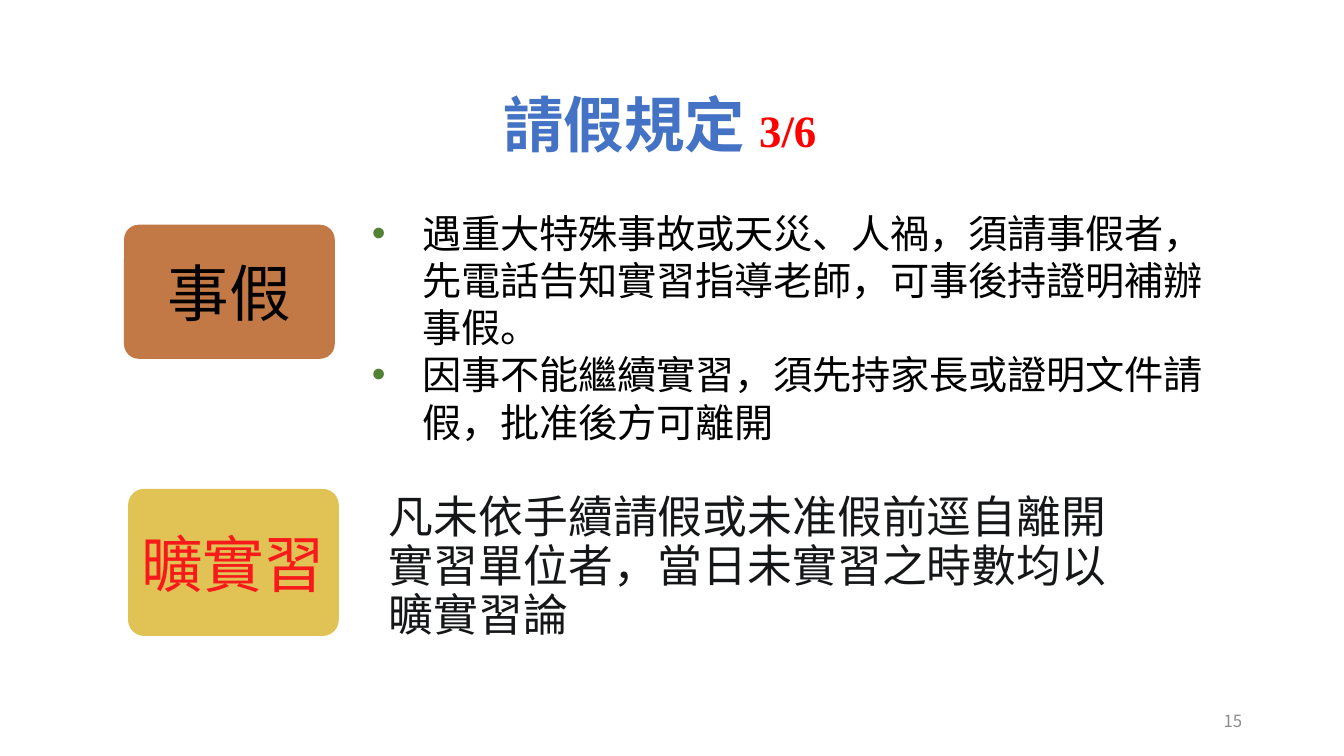
"""Build the slide on leave rules: personal leave and unexcused absence."""
import pptx
import pptx.dml.color
import pptx.enum.shapes
import pptx.enum.text
import pptx.oxml
import pptx.oxml.ns
import pptx.util

Inches, Pt = pptx.util.Inches, pptx.util.Pt
ALIGN, ANCHOR = pptx.enum.text.PP_ALIGN, pptx.enum.text.MSO_ANCHOR
CJK = "Noto Sans CJK SC"
COLORS = {
    "title": "4472C4", "count": "FF0000", "black": "000000", "bullet": "548235",
    "brown": "C27946", "yellow": "E0C354", "red": "F81A1A", "ink": "151617",
    "number": "8C8C8C",
}


def style_font(font, size, color, name=CJK, **attributes):
    """Set size, colour, Latin and East Asian face, and extra run attributes."""
    font.size = Pt(size)
    font.color.rgb = pptx.dml.color.RGBColor.from_string(COLORS[color])
    font.name = name
    properties = font._element if hasattr(font, "_element") else font._rPr
    east_asian = pptx.oxml.parse_xml(
        f'<a:ea {pptx.oxml.ns.nsdecls("a")} typeface="{name}"/>')
    properties.find(pptx.oxml.ns.qn("a:latin")).addnext(east_asian)
    for key, value in attributes.items():
        properties.set(key, value)


def add_text(page, left, top, width, height):
    """Add a wrapping text box and return its frame."""
    box = page.shapes.add_textbox(*map(Inches, (left, top, width, height)))
    box.text_frame.word_wrap = True
    return box.text_frame


deck = pptx.Presentation()
deck.slide_width, deck.slide_height = Inches(13.33), Inches(7.5)
page = deck.slides.add_slide(deck.slide_layouts[5])

title = page.shapes.title
title.left, title.top, title.width, title.height = map(Inches, (2.02, 0.81, 9.05, 0.83))
frame = title.text_frame
frame.margin_left = frame.margin_right = frame.margin_bottom = 0
frame.margin_top = Inches(0.01)
frame.vertical_anchor = ANCHOR.TOP
frame.auto_size = pptx.enum.text.MSO_AUTO_SIZE.NONE
para = frame.paragraphs[0]
para.alignment = ALIGN.CENTER
para.line_spacing = 0.9
for words, size, color, name in (
    ("請假規定 ", 54, "title", CJK),
    ("3/6", 40, "count", "Times New Roman"),
):
    span = para.add_run()
    span.text = words
    span.font.bold = True
    style_font(span.font, size, color, name, cap="small")

for words, left, top, height, fill, color, spacing in (
    ("事假", 1.23, 2.23, 1.33, "brown", "black", "-30"),
    ("曠實習", 1.27, 4.85, 1.46, "yellow", "red", "-20"),
):
    label = page.shapes.add_shape(
        pptx.enum.shapes.MSO_SHAPE.ROUNDED_RECTANGLE,
        *map(Inches, (left, top, 2.09, height)))
    label.adjustments[0] = 0.11
    label.shadow.inherit = False
    label.fill.solid()
    label.fill.fore_color.rgb = pptx.dml.color.RGBColor.from_string(COLORS[fill])
    label.line.fill.background()
    frame = label.text_frame
    frame.margin_left = frame.margin_right = 0
    frame.vertical_anchor = ANCHOR.MIDDLE
    para = frame.paragraphs[0]
    para.text = words
    para.alignment = ALIGN.CENTER
    style_font(para.font, 44, color, spc=spacing)

frame = add_text(page, 3.59, 2.03, 8.57, 2.46)
rules = (
    "遇重大特殊事故或天災、人禍，須請事假者，先電話告知實習指導老師，可事後持證明補辦事假。",
    "因事不能繼續實習，須先持家長或證明文件請假，批准後方可離開",
)
frame.text = "\n".join(rules)
for para in frame.paragraphs:
    properties = para._p.get_or_add_pPr()
    properties.set("marL", str(Inches(0.5)))
    properties.set("indent", str(-Inches(0.5)))
    for bullet in (
        f'<a:buClr {{}}><a:srgbClr val="{COLORS["bullet"]}"/></a:buClr>',
        '<a:buFont {} typeface="Arial"/>',
        '<a:buChar {} char="•"/>',
    ):
        properties.append(pptx.oxml.parse_xml(bullet.format(pptx.oxml.ns.nsdecls("a"))))
    style_font(para.font, 28, "black", spc="-10")

frame = add_text(page, 3.76, 4.85, 7.57, 1.57)
para = frame.paragraphs[0]
para.text = "凡未依手續請假或未准假前逕自離開實習單位者，當日未實習之時數均以曠實習論"
para.line_spacing = Pt(35)
style_font(para.font, 32, "ink")

frame = add_text(page, 9.42, 6.95, 3, 0.4)
frame.vertical_anchor = ANCHOR.MIDDLE
para = frame.paragraphs[0]
para.text = "15"
para.alignment = ALIGN.RIGHT
style_font(para.font, 12, "number")

deck.save("out.pptx")
